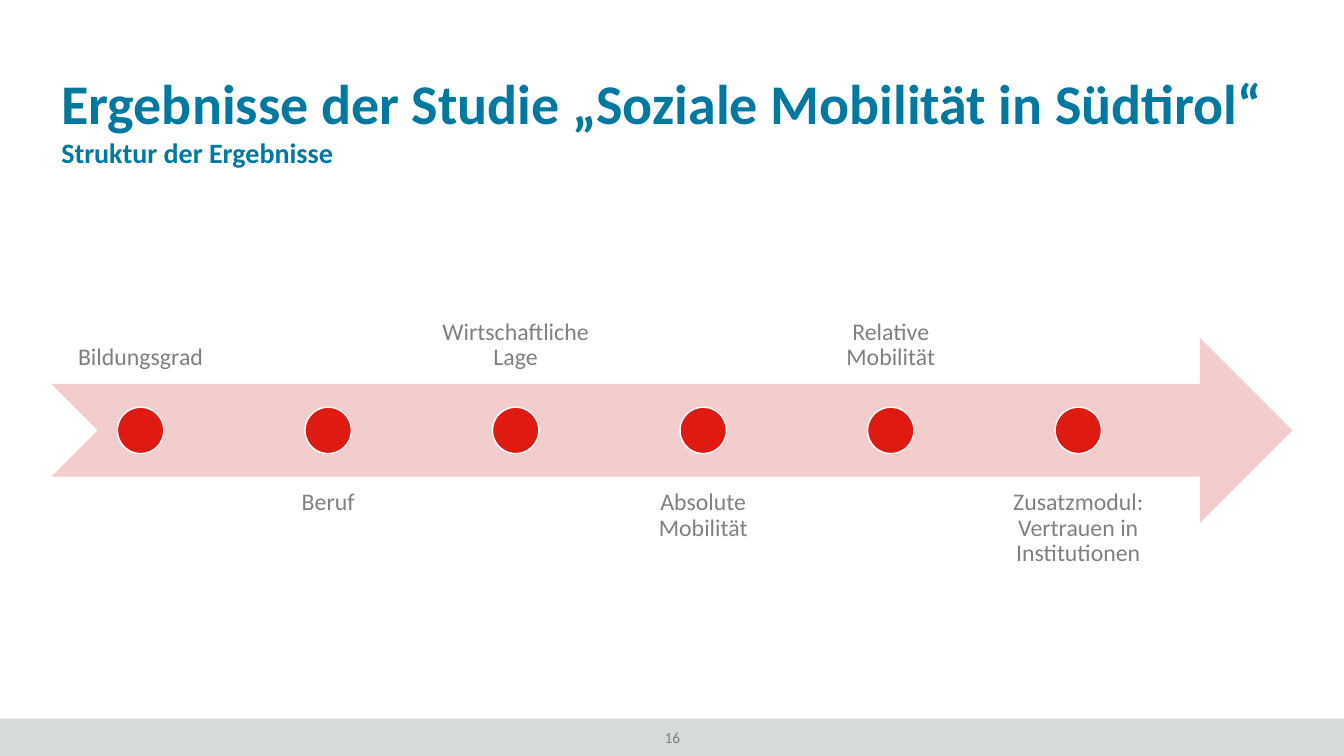
from pptx import Presentation
from pptx.dml.color import RGBColor
from pptx.enum.shapes import MSO_SHAPE as Kind
from pptx.enum.text import MSO_ANCHOR as Anchor, PP_ALIGN as Align
from pptx.util import Inches, Pt

TITLE = "Ergebnisse der Studie „Soziale Mobilität in Südtirol“"
SUBTITLE = "Struktur der Ergebnisse"
NUMBER = "16"
STEPS = [
    "Bildungsgrad",
    "Beruf",
    "Wirtschaftliche Lage",
    "Absolute Mobilität",
    "Relative Mobilität",
    "Zusatzmodul: Vertrauen in Institutionen",
]
BLUE, GRAY, RED, PINK, BAND = "0078A0", "808080", "DE1A11", "F2CDCC", "D7DADA"
WHITE = "FFFFFF"
LEFT, WIDE = 0.51, 12.31
TALL, MID = 1.84, 4.27
STEP, LABEL, DOT = 1.86, 1.77, 0.46


def color(code):
    return RGBColor.from_string(code)


def draw(slide, kind, box, fill, line=None):
    shape = slide.shapes.add_shape(kind, *map(Inches, box))
    shape.shadow.inherit = False
    shape.fill.solid()
    shape.fill.fore_color.rgb = color(fill)
    if line:
        shape.line.color.rgb = color(line)
        shape.line.width = Pt(1)
    else:
        shape.line.fill.background()


def write(slide, text, box, size, tint, bold=False, align=Align.LEFT,
          anchor=Anchor.TOP, pad=(0.1, 0.05), space=0.9):
    frame = slide.shapes.add_textbox(*map(Inches, box)).text_frame
    frame.word_wrap = True
    frame.vertical_anchor = anchor
    frame.margin_left = frame.margin_right = Inches(pad[0])
    frame.margin_top = frame.margin_bottom = Inches(pad[1])
    para = frame.paragraphs[0]
    para.text = text
    para.alignment = align
    para.line_spacing = space
    font = para.font
    font.name, font.size, font.bold = "Calibri", Pt(size), bold
    font.color.rgb = color(tint)


def main():
    """Build the slide with the timeline of results."""
    deck = Presentation()
    deck.slide_width, deck.slide_height = Inches(13.33), Inches(7.5)
    slide = deck.slides.add_slide(deck.slide_layouts[6])

    draw(slide, Kind.RECTANGLE, (0, 7.13, 13.33, 0.37), BAND)
    write(slide, NUMBER, (6.07, 7.17, 1.2, 0.29), 11, GRAY,
          align=Align.CENTER, space=1.0)
    draw(slide, Kind.NOTCHED_RIGHT_ARROW, (LEFT, MID - TALL / 2, WIDE, TALL), PINK)

    for i, text in enumerate(STEPS):
        x = LEFT + i * STEP
        above = i % 2 == 0
        y = MID - DOT - TALL if above else MID + DOT
        write(slide, text, (x, y, LABEL, TALL), 17, GRAY, align=Align.CENTER,
              anchor=Anchor.BOTTOM if above else Anchor.TOP, pad=(0.13, 0.13))
        draw(slide, Kind.OVAL,
             (x + (LABEL - DOT) / 2, MID - DOT / 2, DOT, DOT), RED, WHITE)

    write(slide, TITLE, (LEFT, 0.66, WIDE, 0.67), 40, BLUE, True, pad=(0.1, 0.1))
    write(slide, SUBTITLE, (LEFT, 1.33, WIDE, 0.42), 20, BLUE, True)
    deck.save("out.pptx")


if __name__ == "__main__":
    main()
